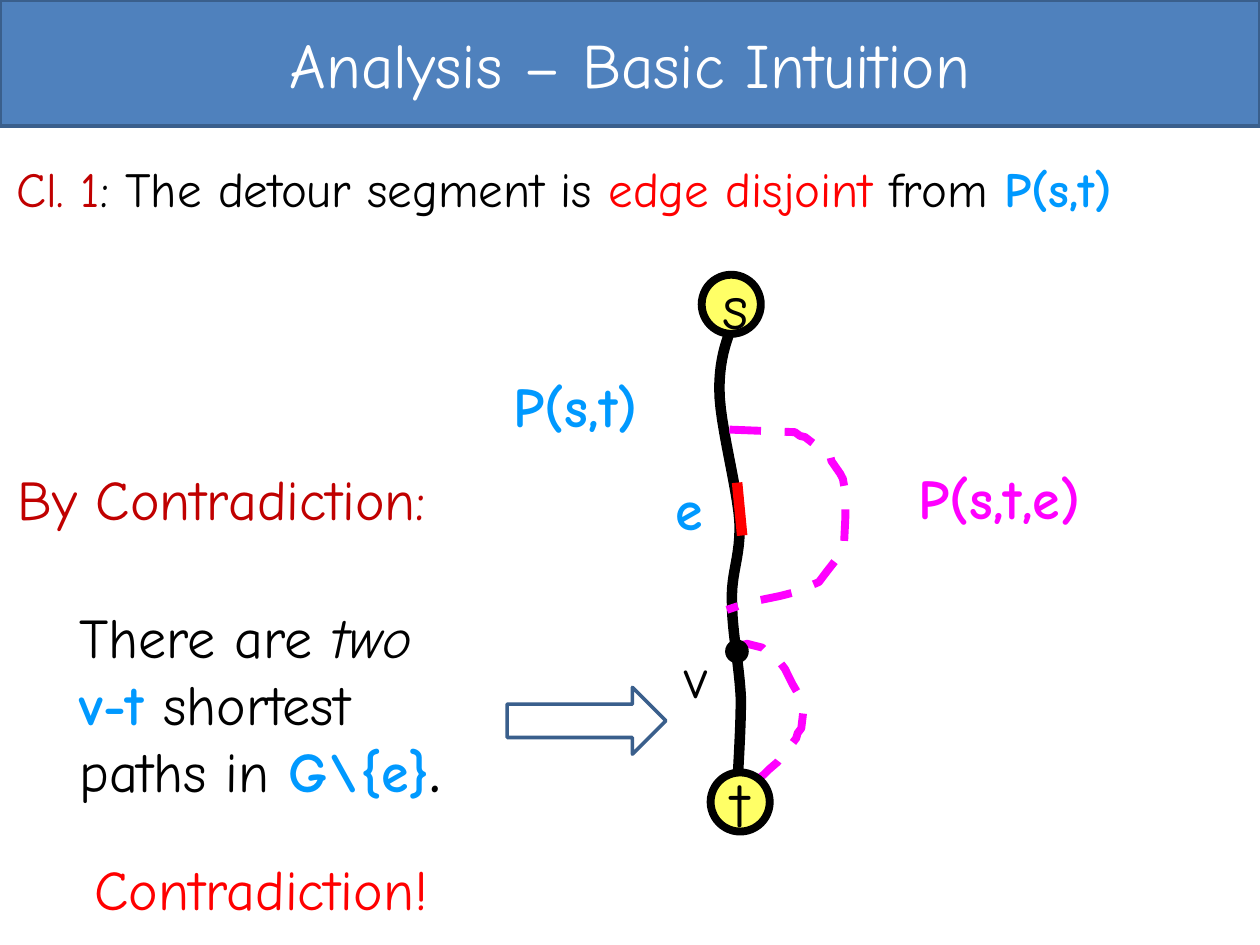
"""Build the slide on the basic intuition behind replacement path analysis."""
from lxml.etree import SubElement
from pptx import Presentation
from pptx.dml.color import RGBColor
from pptx.enum.dml import MSO_LINE_DASH_STYLE as DASH
from pptx.enum.shapes import MSO_CONNECTOR as CONNECTOR, MSO_SHAPE as SHAPE
from pptx.enum.text import MSO_ANCHOR as ANCHOR, MSO_AUTO_SIZE as AUTO_SIZE, PP_ALIGN as ALIGN
from pptx.oxml.ns import qn
from pptx.util import Pt

COLORS = {
    "bar": "4F81BD", "bar_line": "3A5F8C", "white": "FFFFFF", "black": "000000",
    "node": "FFFF66", "blue": "0099FF", "red": "FF0000", "dark_red": "C00000",
    "magenta": "FF00FF",
}
FONT = "Comic Neue"


def write(para, text, size=32, color="black", bold=False, italic=False):
    span = para.add_run()
    span.text = text
    span.font.name = FONT
    span.font.size = Pt(size)
    span.font.bold = bold
    span.font.italic = italic
    span.font.color.rgb = RGBColor.from_string(COLORS[color])


def style(shape, fill=None, line="black", width=2):
    shape.shadow.inherit = False
    if fill:
        shape.fill.solid()
        shape.fill.fore_color.rgb = RGBColor.from_string(COLORS[fill])
    else:
        shape.fill.background()
    shape.line.color.rgb = RGBColor.from_string(COLORS[line])
    shape.line.width = Pt(width)


deck = Presentation()
deck.slide_width, deck.slide_height = Pt(720), Pt(540)
page = deck.slides.add_slide(deck.slide_layouts[5])

title = page.shapes.title
title.left, title.top, title.width, title.height = Pt(0), Pt(0), Pt(720), Pt(72)
title.fill.solid()
title.fill.fore_color.rgb = RGBColor.from_string(COLORS["bar"])
title.line.color.rgb = RGBColor.from_string(COLORS["bar_line"])
title.line.width = Pt(2)
title.text_frame.auto_size = AUTO_SIZE.NONE
title.text_frame.vertical_anchor = ANCHOR.MIDDLE
title.text_frame.paragraphs[0].alignment = ALIGN.CENTER
write(title.text_frame.paragraphs[0], "Analysis – Basic Intuition", size=36, color="white")

path_start = (421.2, 179.3)
path_curves = [
    ((416.2, 191.5), (411.1, 203), (411.1, 222.5)),
    ((411.1, 241.9), (421.2, 277.9), (422.6, 298.1)),
    ((423.4, 318.2), (417.6, 326.9), (418.3, 344.2)),
    ((418.3, 361.4), (422.6, 380.2), (423.4, 399.6)),
    ((423.4, 419.8), (420.5, 462.2), (420.5, 462.2)),
]
steps = 12
shortest_path = [path_start]
for control_1, control_2, end in path_curves:
    start = shortest_path[-1]
    for step in range(1, steps + 1):
        t = step / steps
        weights = ((1 - t) ** 3, 3 * t * (1 - t) ** 2, 3 * t ** 2 * (1 - t), t ** 3)
        corners = (start, control_1, control_2, end)
        shortest_path.append(tuple(
            sum(weight * corner[axis] for weight, corner in zip(weights, corners))
            for axis in (0, 1)))

upper_detour = [
    (416.9, 245.5), (454.3, 247), (457.2, 249.1), (460.1, 249.8), (465.8, 254.2),
    (474.5, 260.6), (475.2, 263.5), (480.2, 270.7), (481.7, 273.6), (483.1, 281.5),
    (483.1, 296), (482.4, 310.3), (480.2, 313.2), (479.5, 317.5), (477.4, 320.4),
    (472.3, 326.9), (468, 332.6), (454.3, 338.4), (445.7, 340.6), (432, 343.4),
    (421.9, 346.3), (415.4, 348.5),
]
lower_detour = [
    (419, 370.1), (424.1, 368.6), (427, 367.9), (435.6, 370.1), (438.5, 373),
    (444.2, 376.6), (448.6, 382.3), (450, 385.2), (452.9, 391), (457.9, 399.6),
    (459, 406.8), (457.9, 416.2), (455.8, 419), (455, 421.9), (452.2, 425.5),
    (448.6, 429.8), (444.2, 435.6), (439.2, 439.9), (436.3, 442.8), (433.4, 445),
]
routes = [
    (shortest_path, "black", 6, None),
    (upper_detour, "magenta", 4.5, DASH.DASH),
    (lower_detour, "magenta", 4.5, DASH.DASH),
]
for points, color, width, dash in routes:
    corners = [(Pt(x), Pt(y)) for x, y in points]
    builder = page.shapes.build_freeform(*corners[0])
    builder.add_line_segments(corners[1:], close=False)
    route = builder.convert_to_shape()
    style(route, line=color, width=width)
    if dash:
        route.line.dash_style = dash

failed_edge = page.shapes.add_connector(
    CONNECTOR.STRAIGHT, Pt(421.2), Pt(275.8), Pt(424.1), Pt(306))
failed_edge.line.color.rgb = RGBColor.from_string(COLORS["red"])
failed_edge.line.width = Pt(6)
SubElement(failed_edge._element.spPr, qn("a:effectLst"))

for name, left, top in [("s", 401, 157), ("t", 406.1, 441.4)]:
    node = page.shapes.add_shape(SHAPE.OVAL, Pt(left), Pt(top), Pt(33.8), Pt(33.8))
    style(node, fill="node", width=4.5)
    node.text_frame.vertical_anchor = ANCHOR.MIDDLE
    node.text_frame.paragraphs[0].alignment = ALIGN.CENTER
    write(node.text_frame.paragraphs[0], name, size=36)

meeting_point = page.shapes.add_shape(SHAPE.OVAL, Pt(415.4), Pt(366.5), Pt(11.5), Pt(11.5))
style(meeting_point, fill="black")
page.shapes._spTree.remove(meeting_point._element)
page.shapes._spTree.insert_element_before(meeting_point._element, "p:extLst")

arrow = page.shapes.add_shape(SHAPE.RIGHT_ARROW, Pt(289.8), Pt(392.8), Pt(90.7), Pt(38.2))
style(arrow, line="bar_line")

blue = {"color": "blue", "bold": True}
claim = {"size": 28}
labels = [
    ((2.2, 87.1, 717, 41), [[
        ("Cl. 1", {**claim, "color": "dark_red"}),
        (": The detour segment is ", claim),
        ("edge disjoint ", {**claim, "color": "red"}),
        ("from ", claim),
        ("P(s,t)", {**claim, **blue})]]),
    ((286.6, 208.8, 114.5, 46), [[("P(s,t)", blue)]]),
    ((378.7, 267.8, 32.4, 46), [[("e", blue)]]),
    ((517.7, 261.4, 146.9, 46), [[("P(s,t,e)", {"color": "magenta", "bold": True})]]),
    ((383.8, 363.6, 39.6, 46), [[("v", {})]]),
    ((2.9, 262.1, 275, 46), [[("By Contradiction:", {"color": "dark_red"})]]),
    ((38.2, 340.6, 239, 123.8), [
        [("There are ", {}), ("two", {"italic": True})],
        [("v-t", blue), (" shortest", {})],
        [("paths in ", {}), ("G\\{e}", blue), (".", {"bold": True})]]),
    ((46.8, 484.6, 226, 46), [[("Contradiction!", {"color": "red"})]]),
]
for place, lines in labels:
    box = page.shapes.add_textbox(*[Pt(length) for length in place])
    frame = box.text_frame
    frame.word_wrap = True
    for index, spans in enumerate(lines):
        para = frame.add_paragraph() if index else frame.paragraphs[0]
        for text, look in spans:
            write(para, text, **look)

deck.save("out.pptx")
